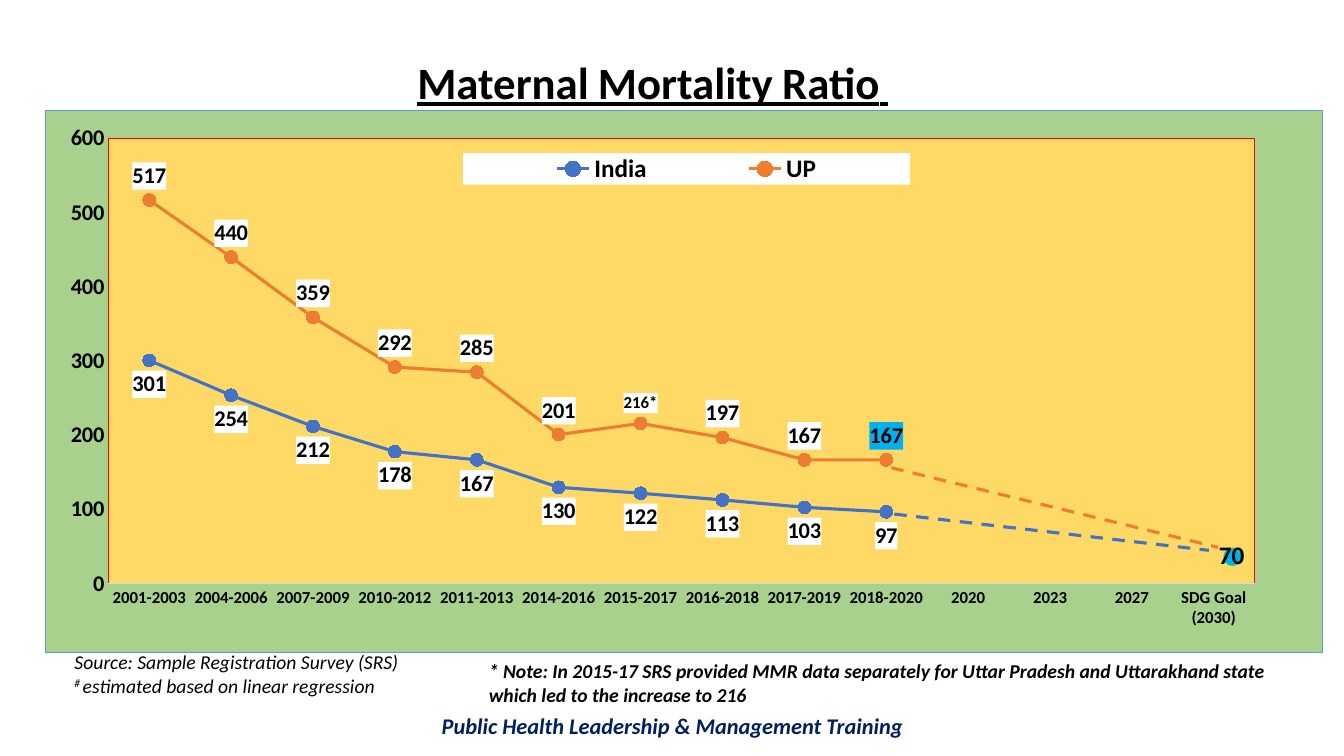
import pptx
import pptx.chart.data
import pptx.dml.color
import pptx.enum.chart
import pptx.enum.dml
import pptx.enum.shapes
import pptx.enum.text
import pptx.oxml
import pptx.oxml.ns
import pptx.util

Inches = pptx.util.Inches
Pt = pptx.util.Pt
RGBColor = pptx.dml.color.RGBColor
ALIGN = pptx.enum.text.PP_ALIGN
SIDE = pptx.enum.chart.XL_LABEL_POSITION

BLACK = RGBColor(0, 0, 0)
WHITE = RGBColor(255, 255, 255)
NAVY = RGBColor(0x00, 0x20, 0x60)
BLUE = RGBColor(0x44, 0x72, 0xC4)
ORANGE = RGBColor(0xED, 0x7D, 0x31)
GREEN = RGBColor(0xA9, 0xD1, 0x8E)
YELLOW = RGBColor(0xFF, 0xD9, 0x66)
SKY = RGBColor(0x00, 0xB0, 0xF0)
TEAL = RGBColor(0x00, 0xD2, 0xAA)
STEEL = RGBColor(0x5B, 0x9B, 0xD5)
RED = RGBColor(0xFF, 0, 0)
GREY = RGBColor(0xD9, 0xD9, 0xD9)

YEARS = ["2001-2003", "2004-2006", "2007-2009", "2010-2012", "2011-2013",
         "2014-2016", "2015-2017", "2016-2018", "2017-2019", "2018-2020",
         "2020", "2023", "2027", "SDG Goal (2030)"]
INDIA = [301, 254, 212, 178, 167, 130, 122, 113, 103, 97]
UP = [517, 440, 359, 292, 285, 201, 216, 197, 167, 167]


def style(font, size, color=BLACK, bold=False, italic=False):
    font.name = "Calibri"
    font.size = Pt(size)
    font.bold = bold
    font.italic = italic
    font.color.rgb = color


def add_title(slide):
    title = slide.shapes.title
    title.left, title.top = Inches(0.22), Inches(0.53)
    title.width, title.height = Inches(12.51), Inches(0.63)
    frame = title.text_frame
    frame.vertical_anchor = pptx.enum.text.MSO_ANCHOR.MIDDLE
    line = frame.paragraphs[0]
    line.alignment = ALIGN.CENTER
    line.line_spacing = 0.9
    style(line.font, 32, bold=True)
    for word in ("Maternal", "Mortality", "Ratio"):
        for text, size in ((word, 32), (" ", 28)):
            run = line.add_run()
            run.text = text
            run.font.size = Pt(size)
            run.font.underline = True


def add_text(slide, box, lines, size, color=BLACK, bold=False, italic=False,
             align=ALIGN.LEFT):
    frame = slide.shapes.add_textbox(*map(Inches, box)).text_frame
    frame.word_wrap = True
    frame.text = "\n".join(lines)
    for line in frame.paragraphs:
        line.alignment = align
        style(line.font, size, color, bold, italic)
    return frame


def shape_xml(fill, edge=None, width=0):
    line = "<a:ln><a:noFill/></a:ln>"
    if edge is not None:
        line = (f'<a:ln w="{Pt(width)}"><a:solidFill><a:srgbClr val="{edge}"/>'
                "</a:solidFill></a:ln>")
    return pptx.oxml.parse_xml(
        f'<c:spPr {pptx.oxml.ns.nsdecls("c", "a")}><a:solidFill>'
        f'<a:srgbClr val="{fill}"/></a:solidFill>{line}</c:spPr>')


def layout_xml(x, y, w, h, inner=False):
    target = '<c:layoutTarget val="inner"/>' if inner else ""
    return pptx.oxml.parse_xml(
        f'<c:layout {pptx.oxml.ns.nsdecls("c")}><c:manualLayout>{target}'
        '<c:xMode val="edge"/><c:yMode val="edge"/>'
        f'<c:x val="{x}"/><c:y val="{y}"/><c:w val="{w}"/><c:h val="{h}"/>'
        "</c:manualLayout></c:layout>")


def back(node, fill):
    node.xpath("c:txPr | c:dLblPos")[0].addprevious(shape_xml(fill))


def style_line(line, color, side):
    line.smooth = False
    line.format.line.color.rgb = color
    line.format.line.width = Pt(2.25)
    mark = line.marker
    mark.style = pptx.enum.chart.XL_MARKER_STYLE.CIRCLE
    mark.size = 9
    mark.format.fill.solid()
    mark.format.fill.fore_color.rgb = color
    mark.format.line.color.rgb = color
    labels = line.data_labels
    labels.show_value = True
    labels.position = side
    style(labels.font, 16, bold=True)
    back(labels._element, WHITE)


def mark_points(line):
    note = line.points[6].data_label
    text = note.text_frame.paragraphs[0]
    run = text.add_run()
    run.text = "216*"
    style(run.font, 12, bold=True)
    last = line.points[9].data_label
    style(last.font, 16, bold=True)
    for label in (note, last):
        label.position = SIDE.ABOVE
    nodes = line.data_labels._element.xpath("c:dLbl")
    for node, fill in zip(nodes, (WHITE, SKY)):
        back(node, fill)


def style_axes(chart):
    none = pptx.enum.chart.XL_TICK_MARK.NONE
    for axis, size in ((chart.category_axis, 12), (chart.value_axis, 16)):
        axis.major_tick_mark = none
        axis.minor_tick_mark = none
        axis.has_major_gridlines = False
        style(axis.tick_labels.font, size, bold=True)
    chart.category_axis.format.line.color.rgb = GREY
    chart.category_axis.format.line.width = Pt(0.75)
    scale = chart.value_axis
    scale.format.line.fill.background()
    scale.minimum_scale, scale.maximum_scale = 0, 600
    scale.major_unit = 100


def style_legend(chart):
    chart.has_legend = True
    legend = chart.legend
    legend.position = pptx.enum.chart.XL_LEGEND_POSITION.BOTTOM
    legend.include_in_layout = False
    style(legend.font, 18, bold=True)
    node = legend._element
    for old in node.xpath("c:layout"):
        node.remove(old)
    node.xpath("c:legendPos")[0].addnext(layout_xml(0.327, 0.079, 0.35, 0.058))
    back(node, WHITE)


def add_chart(slide):
    data = pptx.chart.data.CategoryChartData()
    data.categories = YEARS
    for name, values in (("India", INDIA), ("UP", UP)):
        data.add_series(name, values + [None] * (len(YEARS) - len(values)))
    box = map(Inches, (0.45, 1.09, 12.67, 5.39))
    chart = slide.shapes.add_chart(
        pptx.enum.chart.XL_CHART_TYPE.LINE_MARKERS, *box, data).chart
    chart.has_title = False
    style(chart.font, 10)
    chart.plots[0].vary_by_categories = False
    style_axes(chart)
    style_legend(chart)
    india, state = chart.plots[0].series
    style_line(india, BLUE, SIDE.BELOW)
    style_line(state, ORANGE, SIDE.ABOVE)
    mark_points(state)
    space = chart._chartSpace
    space.xpath("c:txPr")[0].addprevious(shape_xml(GREEN, STEEL, 0.5))
    area = space.xpath("c:chart/c:plotArea")[0]
    for old in area.xpath("c:layout"):
        area.remove(old)
    area.insert(0, layout_xml(0.049, 0.052, 0.898, 0.821, True))
    area.append(shape_xml(YELLOW, RED, 0.75))


def add_goal(slide):
    box = map(Inches, (12.14, 5.44, 0.17, 0.17))
    dot = slide.shapes.add_shape(pptx.enum.shapes.MSO_SHAPE.OVAL, *box)
    dot.shadow.inherit = False
    dot.fill.solid()
    dot.fill.fore_color.rgb = SKY
    dot.line.color.rgb = TEAL
    dot.line.width = Pt(1)
    add_text(slide, (11.99, 5.3, 0.51, 0.4), ["70"], 18, bold=True)


def add_trend(slide, ends, color):
    line = slide.shapes.add_connector(
        pptx.enum.shapes.MSO_CONNECTOR.STRAIGHT, *map(Inches, ends))
    line.line.color.rgb = color
    line.line.width = Pt(2.25)
    line.line.dash_style = pptx.enum.dml.MSO_LINE.DASH
    line._element.spPr.append(pptx.oxml.parse_xml(
        f'<a:effectLst {pptx.oxml.ns.nsdecls("a")}/>'))


def add_source(slide):
    frame = add_text(slide, (0.64, 6.4, 4.72, 0.57),
                     ["Source: Sample Registration Survey (SRS)", "# "],
                     14, italic=True)
    line = frame.paragraphs[1]
    line.runs[0].font._element.set("baseline", "30000")
    line.add_run().text = "estimated based on linear regression"


def main():
    deck = pptx.Presentation()
    deck.slide_width, deck.slide_height = Inches(13.33), Inches(7.5)
    slide = deck.slides.add_slide(deck.slide_layouts[5])
    add_text(slide, (0.92, 7.02, 11.5, 0.37),
             ["Public Health Leadership & Management Training"],
             16, NAVY, True, True, ALIGN.CENTER)
    add_title(slide)
    add_chart(slide)
    add_goal(slide)
    add_text(slide, (4.75, 6.49, 7.95, 0.57),
             ["* Note: In 2015-17 SRS provided MMR data separately for Uttar "
              "Pradesh and Uttarakhand state which led to the increase to 216"],
             14, bold=True, italic=True)
    add_source(slide)
    add_trend(slide, (8.84, 4.64, 12.08, 5.43), ORANGE)
    add_trend(slide, (8.87, 5.1, 11.99, 5.46), BLUE)
    deck.save("out.pptx")


if __name__ == "__main__":
    main()
